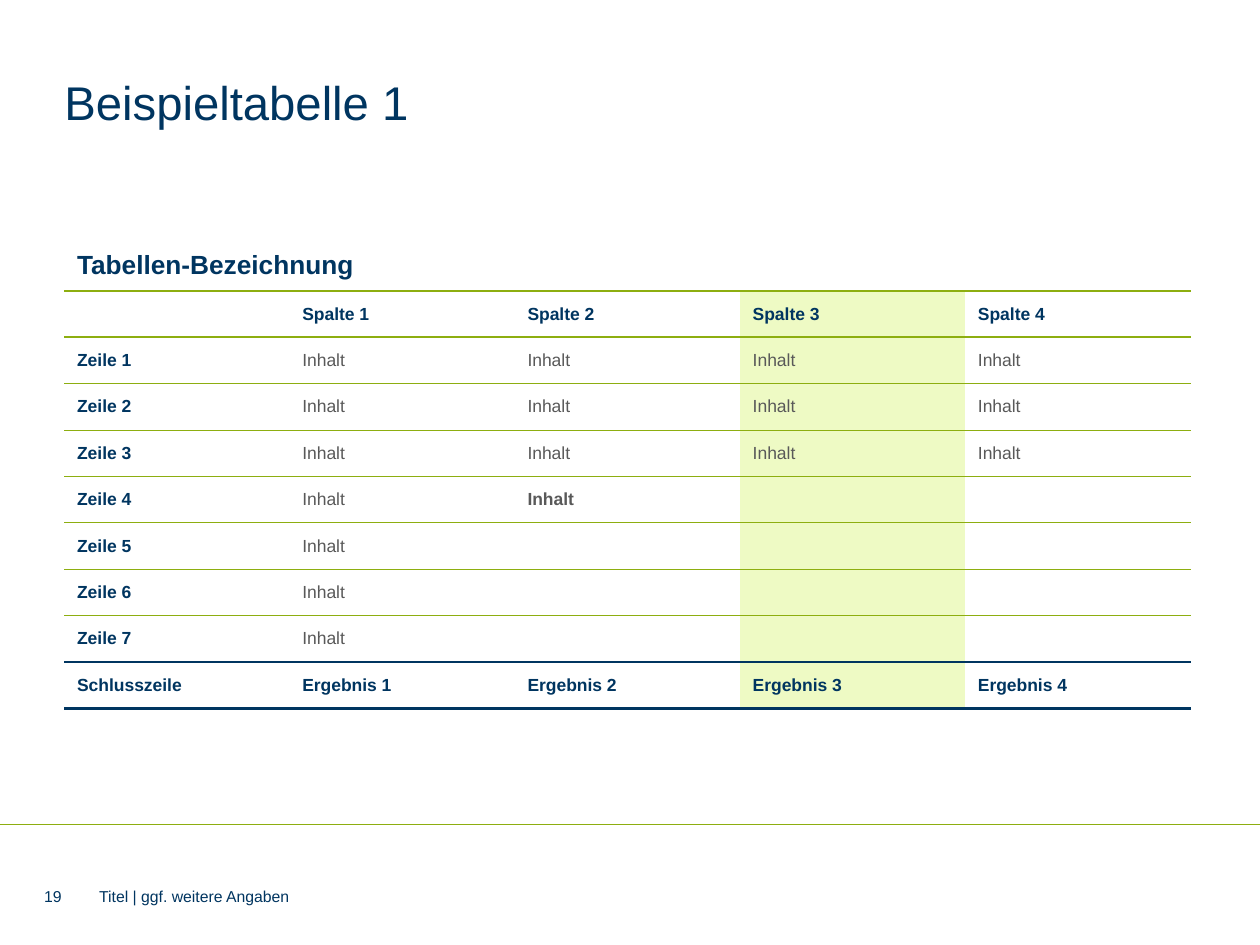
from lxml.etree import SubElement
from pptx import Presentation
from pptx.dml.color import RGBColor
from pptx.enum.shapes import MSO_CONNECTOR as Connector
from pptx.enum.text import MSO_ANCHOR as Anchor
from pptx.oxml import parse_xml
from pptx.oxml.ns import nsdecls, qn
from pptx.util import Cm, Pt

NAVY, GREEN, LIME, GREY = "003560", "8DAE10", "EEFAC4", "595959"
HIGHLIGHT_COLUMN = 3
ROWS = [
    ["Tabellen-Bezeichnung"],
    ["", "Spalte 1", "Spalte 2", "Spalte 3", "Spalte 4"],
    *[[f"Zeile {number}"] + ["Inhalt"] * filled
      for number, filled in enumerate([4, 4, 4, 2, 1, 1, 1], 1)],
    ["Schlusszeile"] + [f"Ergebnis {number}" for number in range(1, 5)],
]
COLUMN_COUNT = 5
LAST = len(ROWS) - 1
BOLD_CONTENT = (5, 2)
RULES = [None, (GREEN, 1.5), (GREEN, 1.5)] + [(GREEN, 0.5)] * 6 + [(NAVY, 1.5)] * 2


def color(value):
    return RGBColor.from_string(value)


def style(paragraph, size, tone=NAVY, bold=False):
    for run in paragraph.runs:
        run.font.name = "Arial"
        run.font.size = Pt(size)
        run.font.bold = bold
        run.font.color.rgb = color(tone)


def add_label(slide, left, top, width, height, wording, size, anchor=Anchor.MIDDLE):
    label = slide.shapes.add_textbox(Cm(left), Cm(top), Cm(width), Cm(height))
    frame = label.text_frame
    frame.word_wrap = True
    frame.vertical_anchor = anchor
    frame.margin_left = frame.margin_right = frame.margin_top = frame.margin_bottom = 0
    frame.text = wording
    style(frame.paragraphs[0], size)


def border_xml(side, rule):
    if rule is None:
        return f'<a:{side} {nsdecls("a")} w="0"><a:noFill/></a:{side}>'
    tone, width = rule
    return (f'<a:{side} {nsdecls("a")} w="{Pt(width)}"><a:solidFill>'
            f'<a:srgbClr val="{tone}"/></a:solidFill></a:{side}>')


def set_borders(cell, above, below):
    properties = cell._tc.get_or_add_tcPr()
    sides = {"lnL": None, "lnR": None, "lnT": above, "lnB": below}
    for position, (side, rule) in enumerate(sides.items()):
        properties.insert(position, parse_xml(border_xml(side, rule)))


def fill_cell(cell, row, column):
    if row and column == HIGHLIGHT_COLUMN:
        cell.fill.solid()
        cell.fill.fore_color.rgb = color(LIME)
    else:
        cell.fill.background()
    set_borders(cell, RULES[row], RULES[row + 1])
    if row:
        cell.vertical_anchor = Anchor.MIDDLE
        cell.margin_top = cell.margin_bottom = 0
    if column < len(ROWS[row]):
        is_content = 1 < row < LAST and column > 0
        paragraph = cell.text_frame.paragraphs[0]
        paragraph.text = ROWS[row][column]
        style(paragraph, 10 if row else 15, GREY if is_content else NAVY,
              not is_content or (row, column) == BOLD_CONTENT)


def add_example_table(slide, left, top, width, height):
    table = slide.shapes.add_table(
        len(ROWS), COLUMN_COUNT, Cm(left), Cm(top), Cm(width), Cm(height)).table
    table.horz_banding = False
    table.first_row = False
    for row in range(len(ROWS)):
        for column in range(COLUMN_COUNT):
            fill_cell(table.cell(row, column), row, column)
    table.cell(0, 0).merge(table.cell(0, COLUMN_COUNT - 1))


def add_footer(slide, left, top, width):
    divider = slide.shapes.add_connector(
        Connector.STRAIGHT, Cm(left), Cm(top), Cm(left + width), Cm(top))
    divider.line.color.rgb = color(GREEN)
    divider.line.width = Pt(0.5)
    SubElement(divider._element.spPr, qn("a:effectLst"))
    text_top = top + 1.25
    add_label(slide, left + 0.89, text_top, 0.71, 0.41, "19", 9)
    add_label(slide, left + 2, text_top, 17.5, 0.41, "Titel | ggf. weitere Angaben", 9)


def main():
    deck = Presentation()
    deck.slide_width, deck.slide_height = Cm(25.4), Cm(19.05)
    slide = deck.slides.add_slide(deck.slide_layouts[6])
    add_footer(slide, 0, 16.61, 25.4)
    add_label(slide, 1.3, 1.47, 21, 1.73, "Beispieltabelle 1", 27, Anchor.TOP)
    add_example_table(slide, 1.3, 4.93, 22.7, 9.35)
    deck.save("out.pptx")


if __name__ == "__main__":
    main()
